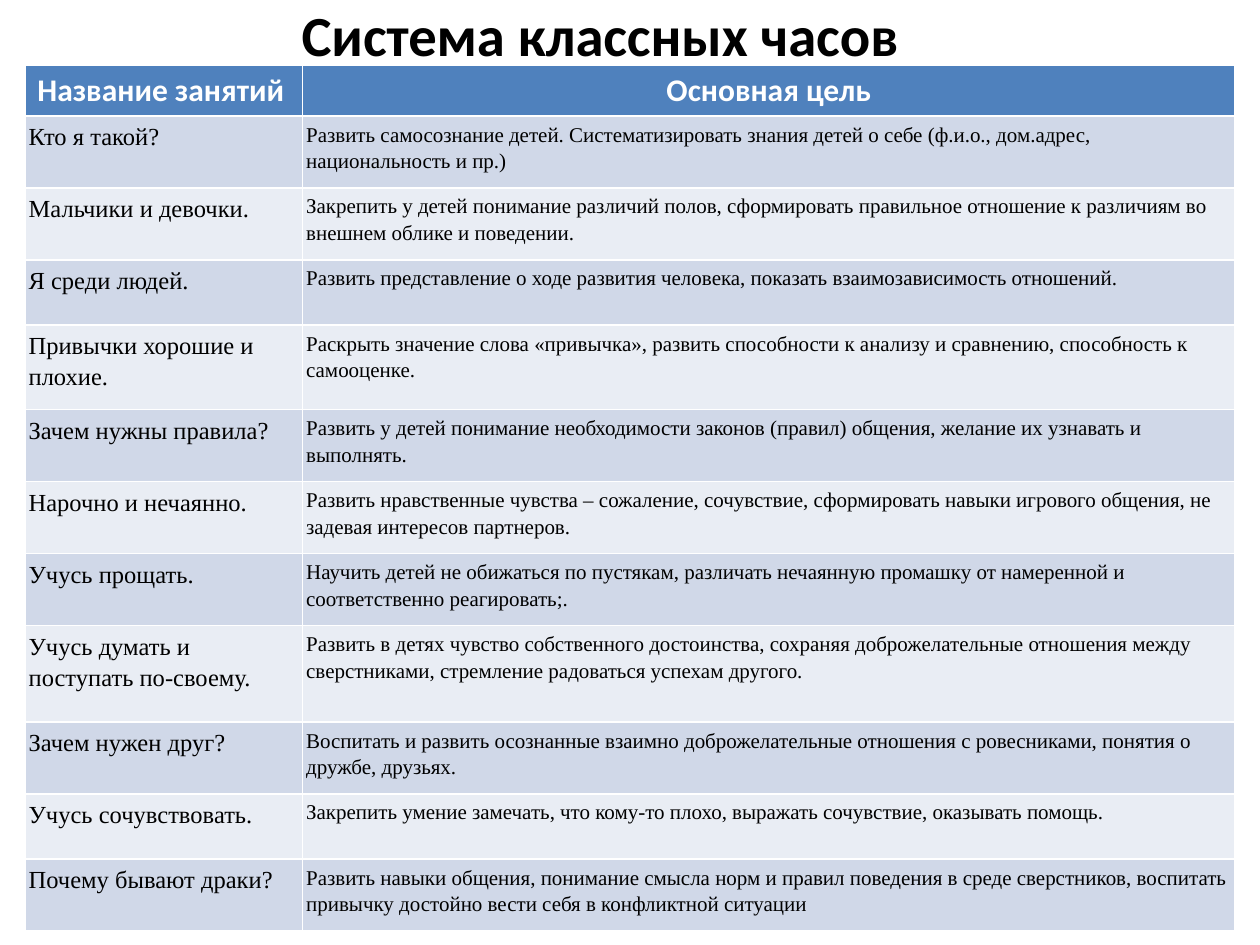
from dataclasses import dataclass
from typing import NamedTuple

from pptx import Presentation
from pptx.dml.color import RGBColor as RGB
from pptx.enum.text import MSO_ANCHOR as Anchor, PP_ALIGN as Align
from pptx.util import Pt


@dataclass(frozen=True)
class Theme:
    heading_font: str = "Calibri"
    body_font: str = "Times New Roman"
    title_size: float = 32.4
    header_size: float = 18
    name_size: float = 14
    goal_size: float = 12
    text: RGB = RGB(0x00, 0x00, 0x00)
    header_text: RGB = RGB(0xFF, 0xFF, 0xFF)
    header_fill: RGB = RGB(0x4F, 0x81, 0xBD)
    bands: tuple[RGB, RGB] = (RGB(0xD0, 0xD8, 0xE8), RGB(0xE9, 0xED, 0xF4))


class Lesson(NamedTuple):
    name: str
    goal: str
    height: float = 41.1


THEME = Theme()
TITLE = "Система классных часов"
HEADERS = ("Название занятий", "Основная цель")
HEADER_HEIGHT = 28.1
SHORT_ROW = 37.3
COLUMN_WIDTHS = (158.6, 533)
CELL_INSET = 2.16
LESSONS = (
    Lesson("Кто я такой?",
           "Развить самосознание детей. Систематизировать знания детей о себе "
           "(ф.и.о., дом.адрес, национальность и пр.)"),
    Lesson("Мальчики и девочки.",
           "Закрепить у детей понимание различий полов, сформировать правильное "
           "отношение к различиям во внешнем облике и поведении."),
    Lesson("Я среди людей.",
           "Развить представление о ходе развития человека, показать "
           "взаимозависимость отношений.", SHORT_ROW),
    Lesson("Привычки хорошие и плохие.",
           "Раскрыть значение слова «привычка», развить способности к анализу и "
           "сравнению, способность к самооценке.", 48.4),
    Lesson("Зачем нужны правила?",
           "Развить у детей понимание необходимости законов (правил) общения, "
           "желание их узнавать и выполнять."),
    Lesson("Нарочно и нечаянно.",
           "Развить нравственные чувства – сожаление, сочувствие, сформировать "
           "навыки игрового общения, не задевая интересов партнеров."),
    Lesson("Учусь прощать.",
           "Научить детей не обижаться по пустякам, различать нечаянную промашку "
           "от намеренной и соответственно реагировать;."),
    Lesson("Учусь думать и поступать по-своему.",
           "Развить в детях чувство собственного достоинства, сохраняя "
           "доброжелательные отношения между сверстниками, стремление радоваться "
           "успехам другого.", 55.3),
    Lesson("Зачем нужен друг?",
           "Воспитать и развить осознанные взаимно доброжелательные отношения с "
           "ровесниками, понятия о дружбе, друзьях."),
    Lesson("Учусь сочувствовать.",
           "Закрепить умение замечать, что кому-то плохо, выражать сочувствие, "
           "оказывать помощь.", SHORT_ROW),
    Lesson("Почему бывают драки?",
           "Развить навыки общения, понимание смысла норм и правил поведения в "
           "среде сверстников, воспитать привычку достойно вести себя в "
           "конфликтной ситуации"),
)


def set_text(tf, text: str, font: str, size: float, color: RGB, bold: bool):
    """Fill a text frame with one formatted paragraph and return it."""
    tf.text = text
    p = tf.paragraphs[0]
    r = p.runs[0]
    r.font.name, r.font.size, r.font.bold = font, Pt(size), bold
    r.font.color.rgb = color
    return p


def fill_cell(cell, color: RGB) -> None:
    cell.fill.solid()
    cell.fill.fore_color.rgb = color


def add_title(s) -> None:
    tf = s.shapes.add_textbox(0, 0, Pt(686), Pt(79)).text_frame
    tf.word_wrap = True
    tf.vertical_anchor = Anchor.TOP
    tf.margin_top = 0
    p = set_text(tf, TITLE, THEME.heading_font, THEME.title_size, THEME.text, True)
    p.alignment = Align.CENTER


def add_header_cell(cell, text: str, align: Align) -> None:
    fill_cell(cell, THEME.header_fill)
    p = set_text(cell.text_frame, text, THEME.heading_font, THEME.header_size,
                 THEME.header_text, True)
    p.alignment = align


def add_body_cell(cell, text: str, size: float, fill: RGB) -> None:
    fill_cell(cell, fill)
    cell.margin_left = cell.margin_right = Pt(CELL_INSET)
    cell.margin_top = cell.margin_bottom = Pt(CELL_INSET)
    p = set_text(cell.text_frame, text, THEME.body_font, size, THEME.text, False)
    p.line_spacing = 1.15


def add_lessons_table(s) -> None:
    heights = (HEADER_HEIGHT, *(lesson.height for lesson in LESSONS))
    table = s.shapes.add_table(
        len(heights), len(COLUMN_WIDTHS), Pt(14.2), Pt(37.5),
        Pt(sum(COLUMN_WIDTHS)), Pt(sum(heights))).table
    for column, width in zip(table.columns, COLUMN_WIDTHS):
        column.width = Pt(width)
    for row, height in zip(table.rows, heights):
        row.height = Pt(height)

    for col, (text, align) in enumerate(zip(HEADERS, (Align.LEFT, Align.CENTER))):
        add_header_cell(table.cell(0, col), text, align)
    for row, lesson in enumerate(LESSONS, start=1):
        band = THEME.bands[(row - 1) % 2]
        add_body_cell(table.cell(row, 0), lesson.name, THEME.name_size, band)
        add_body_cell(table.cell(row, 1), lesson.goal, THEME.goal_size, band)


def main() -> None:
    prs = Presentation()
    prs.slide_width, prs.slide_height = Pt(720), Pt(540)
    s = prs.slides.add_slide(prs.slide_layouts[6])
    add_title(s)
    add_lessons_table(s)
    prs.save("out.pptx")


if __name__ == "__main__":
    main()
